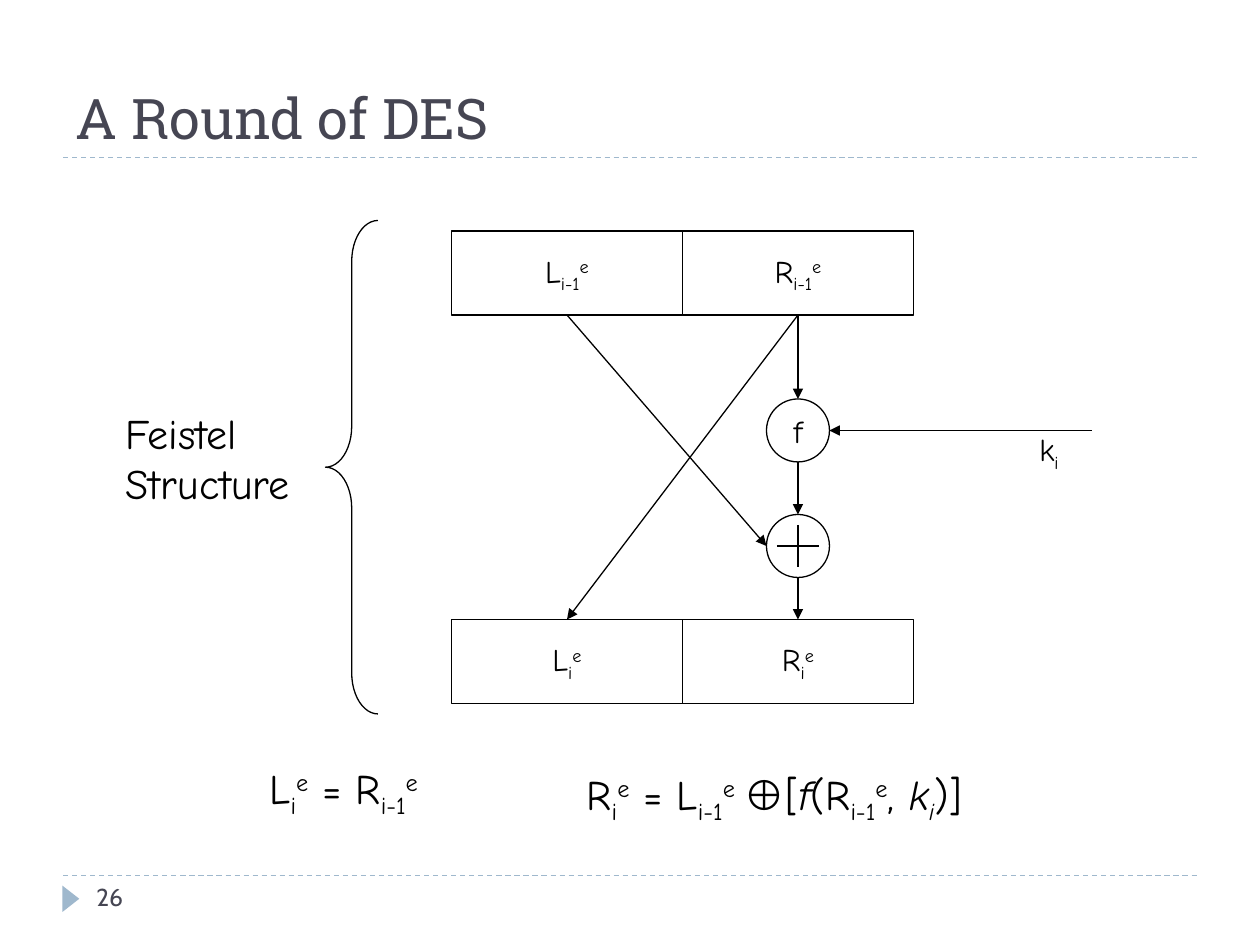
from dataclasses import dataclass

from lxml.etree import SubElement
from pptx import Presentation
from pptx.dml.color import RGBColor
from pptx.enum.dml import MSO_LINE_DASH_STYLE as Dash
from pptx.enum.shapes import MSO_CONNECTOR, MSO_SHAPE as Shape
from pptx.enum.text import MSO_ANCHOR as Anchor, PP_ALIGN as Align
from pptx.oxml.ns import qn
from pptx.util import Emu, Pt

PX = 7620  # 120 px to the inch


@dataclass(frozen=True)
class Theme:
    ink: str = "000000"
    paper: str = "FFFFFF"
    heading: str = "464653"
    accent: str = "9FB8CD"
    title_font: str = "Roboto Slab"
    number_font: str = "Cabin"
    diagram_font: str = "Comic Neue"
    symbol_font: str = "Arial"
    title_size: int = 32
    formula_size: int = 24
    label_size: int = 18
    number_size: int = 14
    line_width: float = 0.75


THEME = Theme()

# Text is a list of paragraphs; a paragraph is a list of (text, marks) pairs.
# Marks: "_" subscript, "^" superscript, "i" italic, "s" symbol font.
TITLE = "A Round of DES"
PAGE = [[("26", "")]]
BRACE_LABEL = [[("Feistel", "")], [("Structure", "")]]
KEY = [[("k", ""), ("i", "_")]]


def half(letter, index):
    return [(letter, ""), (index, "_"), ("e", "^")]


ROUNDS = [("i-1", 220), ("i", 590)]  # index, top of the row
HALVES = [("L", 430), ("R", 650)]  # letter, left of the block
BLOCK_W, BLOCK_H = 220, 80
F_TOP, XOR_TOP, NODE = 380, 490, 60
PLUS_ARM = 20
KEY_START = 1040

LEFT_FORMULA = [half("L", "i") + [(" = ", "")] + half("R", "i-1")]
RIGHT_FORMULA = [
    half("R", "i") + [(" = ", "")] + half("L", "i-1")
    + [(" ", "^"), ("⊕", "s"), ("[", ""), ("f", "i"), ("(", "")]
    + half("R", "i-1")
    + [(", ", ""), ("k", "i"), ("i", "i_"), (")]", "")]
]
TEXTS = [  # text, box, size
    (BRACE_LABEL, (108, 382, 211, 108), THEME.formula_size),
    (LEFT_FORMULA, (245, 720, 182, 60), THEME.formula_size),
    (RIGHT_FORMULA, (547, 726, 427, 60), THEME.formula_size),
    (KEY, (978, 404, 46, 48), THEME.label_size),
]


def rgb(color):
    return RGBColor.from_string(color)


def px(*lengths):
    return [Emu(length * PX) for length in lengths]


def write(frame, paragraphs, size, font=THEME.diagram_font, color=THEME.ink,
          align=Align.LEFT):
    frame.word_wrap = False
    for number, runs in enumerate(paragraphs):
        paragraph = frame.add_paragraph() if number else frame.paragraphs[0]
        paragraph.alignment = align
        paragraph.font.size = Pt(size)
        paragraph.font.name = font
        paragraph.font.color.rgb = rgb(color)
        for text, marks in runs:
            run = paragraph.add_run()
            run.text = text
            if "i" in marks:
                run.font.italic = True
            if "s" in marks:
                run.font.name = THEME.symbol_font
            if "_" in marks:
                run.font._element.set("baseline", "-25000")
            if "^" in marks:
                run.font._element.set("baseline", "30000")


def add_text(slide, paragraphs, box, size, **style):
    write(slide.shapes.add_textbox(*px(*box)).text_frame, paragraphs, size, **style)


def add_outline(slide, kind, box, paragraphs=(), fill=THEME.paper, line=THEME.ink):
    shape = slide.shapes.add_shape(kind, *px(*box))
    shape.shadow.inherit = False
    if fill:
        shape.fill.solid()
        shape.fill.fore_color.rgb = rgb(fill)
    else:
        shape.fill.background()
    if line:
        shape.line.color.rgb = rgb(line)
        shape.line.width = Pt(THEME.line_width)
    else:
        shape.line.fill.background()
    if paragraphs:
        shape.text_frame.vertical_anchor = Anchor.MIDDLE
        write(shape.text_frame, paragraphs, THEME.label_size, align=Align.CENTER)
    return shape


def add_line(slide, start, end, arrow=False, color=THEME.ink, dash=None):
    connector = slide.shapes.add_connector(
        MSO_CONNECTOR.STRAIGHT, *px(*start, *end))
    connector.line.color.rgb = rgb(color)
    connector.line.width = Pt(THEME.line_width)
    if dash:
        connector.line.dash_style = dash
    if arrow:
        SubElement(connector.line._get_or_add_ln(), qn("a:tailEnd"), type="triangle")
    SubElement(connector._element.spPr, qn("a:effectLst"))


def add_frame(slide):
    for y in (150, 834):
        add_line(slide, (60, y), (1140, y), color=THEME.accent, dash=Dash.DASH)
    marker = add_outline(slide, Shape.ISOSCELES_TRIANGLE, (55, 848, 25, 16),
                         fill=THEME.accent, line=None)
    marker.rotation = 90
    title = slide.shapes.title
    title.left, title.top, title.width, title.height = px(60, 20, 1080, 130)
    title.text_frame.vertical_anchor = Anchor.BOTTOM
    write(title.text_frame, [[(TITLE, "")]], THEME.title_size,
          font=THEME.title_font, color=THEME.heading)
    title.text_frame.word_wrap = True
    add_text(slide, PAGE, (80, 834, 260, 48), THEME.number_size,
             font=THEME.number_font, color=THEME.heading)


def add_round(slide):
    for index, top in ROUNDS:
        for letter, left in HALVES:
            add_outline(slide, Shape.RECTANGLE, (left, top, BLOCK_W, BLOCK_H),
                        [half(letter, index)])

    left_x, right_x = (left + BLOCK_W // 2 for _, left in HALVES)
    inputs_bottom, outputs_top = ROUNDS[0][1] + BLOCK_H, ROUNDS[1][1]
    radius = NODE // 2
    f_y, xor_y = F_TOP + radius, XOR_TOP + radius
    for top, label in ((F_TOP, [[("f", "")]]), (XOR_TOP, ())):
        add_outline(slide, Shape.OVAL, (right_x - radius, top, NODE, NODE), label)
    add_line(slide, (right_x, xor_y - PLUS_ARM), (right_x, xor_y + PLUS_ARM))
    add_line(slide, (right_x - PLUS_ARM, xor_y), (right_x + PLUS_ARM, xor_y))

    arrows = [
        ((right_x, inputs_bottom), (left_x, outputs_top)),
        ((left_x, inputs_bottom), (right_x - radius, xor_y)),
        ((right_x, inputs_bottom), (right_x, F_TOP)),
        ((right_x, F_TOP + NODE), (right_x, XOR_TOP)),
        ((right_x, XOR_TOP + NODE), (right_x, outputs_top)),
        ((KEY_START, f_y), (right_x + radius, f_y)),
    ]
    for start, end in arrows:
        add_line(slide, start, end, arrow=True)

    brace = add_outline(slide, Shape.LEFT_BRACE, (310, 210, 50, 470), fill=None)
    brace.adjustments[0] = 0.78


def main():
    deck = Presentation()
    deck.slide_width, deck.slide_height = px(1200, 900)
    slide = deck.slides.add_slide(deck.slide_layouts[5])
    add_frame(slide)
    add_round(slide)
    for paragraphs, box, size in TEXTS:
        add_text(slide, paragraphs, box, size)
    deck.save("out.pptx")


if __name__ == "__main__":
    main()
